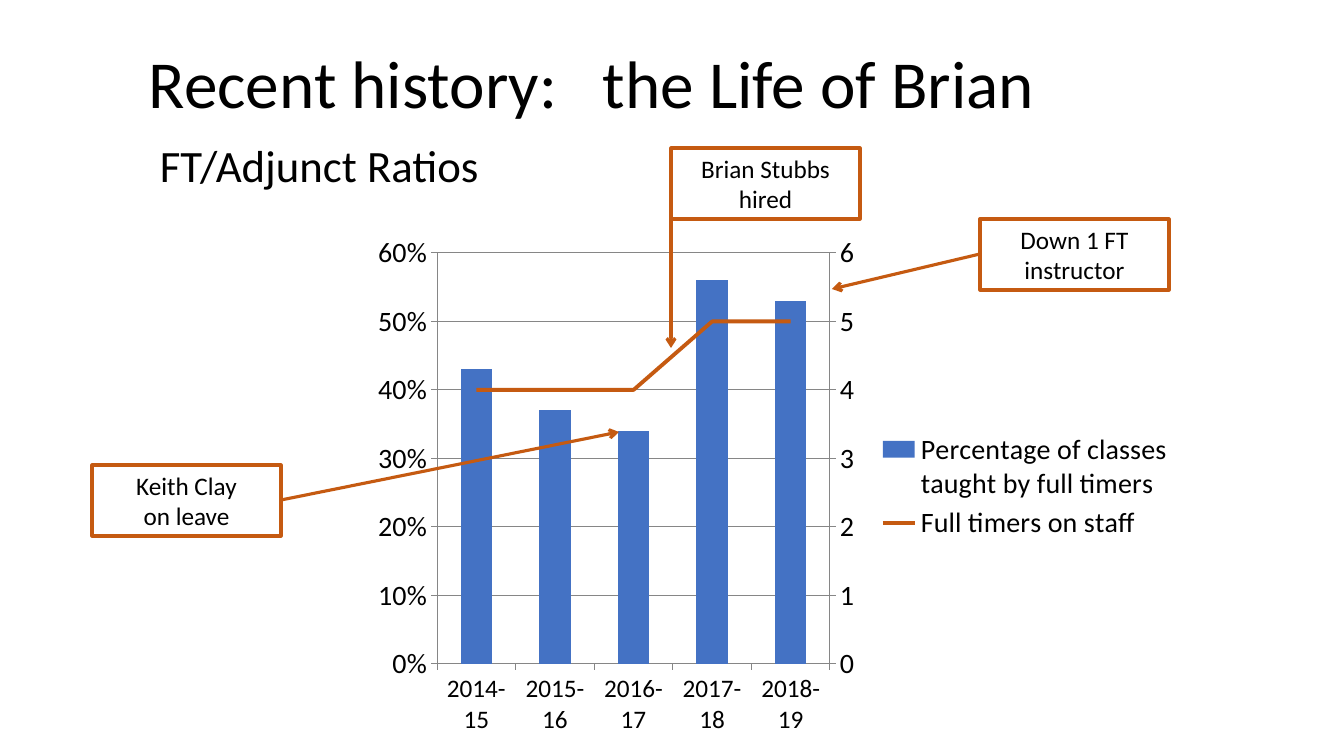
import pptx
import pptx.chart.data
import pptx.dml.color
import pptx.enum.chart
import pptx.enum.shapes
import pptx.enum.text
import pptx.oxml
import pptx.oxml.ns
import pptx.util

rgb = pptx.dml.color.RGBColor.from_string
pt = pptx.util.Pt
qn = pptx.oxml.ns.qn
names = pptx.oxml.ns.nsdecls("c", "a")
theme = {
    "font": "Calibri", "text": "000000", "bar": "4472C4",
    "accent": "C55A11", "grid": "868686",
    "title": 48, "head": 32, "note": 18, "years": 18, "axis": 20,
    "edge": 2.25, "trend": 2.75,
}


def px(count):
    return round(count * 12192000 / 1344)


def place(part, index, box, inner=False):
    """Fix a chart part at a slide box, as shares of the chart frame."""
    for old in part.findall(qn("c:layout")):
        part.remove(old)
    x, y, w, h = box
    left, top, width, height = frame
    shares = {"x": (x - left) / width, "y": (y - top) / height,
              "w": w / width, "h": h / height}
    marks = '<c:layoutTarget val="inner"/>' if inner else ""
    marks += '<c:xMode val="edge"/><c:yMode val="edge"/>'
    marks += "".join(f'<c:{key} val="{share:.4f}"/>' for key, share in shares.items())
    part.insert(index, pptx.oxml.parse_xml(
        f"<c:layout {names}><c:manualLayout>{marks}</c:manualLayout></c:layout>"))


deck = pptx.Presentation()
deck.slide_width, deck.slide_height = px(1344), px(756)
slide = deck.slides.add_slide(deck.slide_layouts[6])

# Headings
headings = [
    ("Recent history:\tthe Life of Brian", (139, 36, 1064, 92), theme["title"]),
    ("FT/Adjunct Ratios", (150, 133, 423, 65), theme["head"]),
]
for words, box, size in headings:
    body = slide.shapes.add_textbox(*map(px, box)).text_frame
    body.word_wrap = True
    body.auto_size = pptx.enum.text.MSO_AUTO_SIZE.SHAPE_TO_FIT_TEXT
    line = body.paragraphs[0]
    line.text = words
    line.font.size = pt(size)
    line.font.name = theme["font"]
    line.font.color.rgb = rgb(theme["text"])
    if "\t" in words:
        line._p.get_or_add_pPr().insert(0, pptx.oxml.parse_xml(
            f'<a:tabLst {names}><a:tab pos="{px(454)}" algn="l"/></a:tabLst>'))

# Chart
data = pptx.chart.data.CategoryChartData()
data.categories = ["2014-15", "2015-16", "2016-17", "2017-18", "2018-19"]
data.add_series("Percentage of classes taught by full timers",
                [0.43, 0.37, 0.34, 0.56, 0.53], "0%")
data.add_series("Full timers on staff", [4, 4, 4, 5, 5], "General")
frame = (362, 225, 820, 520)
chart = slide.shapes.add_chart(
    pptx.enum.chart.XL_CHART_TYPE.COLUMN_CLUSTERED, *map(px, frame), data).chart
chart.has_title = False
chart.font.name = theme["font"]
chart.font.size = pt(theme["axis"])
chart.font.color.rgb = rgb(theme["text"])
chart.has_legend = True
chart.legend.position = pptx.enum.chart.XL_LEGEND_POSITION.RIGHT
chart.legend.include_in_layout = False
chart.legend.font.size = pt(theme["axis"])

years, shares = chart.category_axis, chart.value_axis
shares.minimum_scale, shares.maximum_scale, shares.major_unit = 0, 0.6, 0.1
shares.has_major_gridlines = True
shares.major_gridlines.format.line.color.rgb = rgb(theme["grid"])
shares.tick_labels.number_format = "0%"
shares.tick_labels.number_format_is_linked = False
for axis, size in ((years, theme["years"]), (shares, theme["axis"])):
    axis.format.line.color.rgb = rgb(theme["grid"])
    axis.major_tick_mark = pptx.enum.chart.XL_TICK_MARK.OUTSIDE
    axis.tick_labels.font.size = pt(size)

plot = chart.plots[0]
plot.gap_width = 150
plot.vary_by_categories = False
bars, staff = plot.series
bars.format.fill.solid()
bars.format.fill.fore_color.rgb = rgb(theme["bar"])
staff.format.line.color.rgb = rgb(theme["accent"])
staff.format.line.width = pt(theme["trend"])

# Staff line on a second axis
trend = pptx.oxml.parse_xml(
    f'<c:lineChart {names}><c:grouping val="standard"/><c:varyColors val="0"/>'
    '<c:marker val="1"/><c:axId val="5001"/><c:axId val="5002"/></c:lineChart>')
series = staff._element
for flag in series.findall(qn("c:invertIfNegative")):
    series.remove(flag)
series.find(qn("c:spPr")).addnext(pptx.oxml.parse_xml(
    f'<c:marker {names}><c:symbol val="none"/></c:marker>'))
series.append(pptx.oxml.parse_xml(f'<c:smooth {names} val="0"/>'))
trend.insert(2, series)
plot._element.addnext(trend)
hidden = pptx.oxml.parse_xml(
    f'<c:catAx {names}><c:axId val="5001"/><c:scaling><c:orientation val="minMax"/></c:scaling>'
    '<c:delete val="1"/><c:axPos val="b"/><c:crossAx val="5002"/></c:catAx>')
right = pptx.oxml.parse_xml(
    f'<c:valAx {names}><c:axId val="5002"/><c:scaling><c:orientation val="minMax"/>'
    '<c:max val="6"/><c:min val="0"/></c:scaling><c:delete val="0"/><c:axPos val="r"/>'
    '<c:numFmt formatCode="General" sourceLinked="0"/><c:majorTickMark val="out"/>'
    '<c:minorTickMark val="none"/><c:tickLblPos val="nextTo"/>'
    f'<c:spPr><a:ln><a:solidFill><a:srgbClr val="{theme["grid"]}"/></a:solidFill></a:ln></c:spPr>'
    f'<c:txPr><a:bodyPr/><a:p><a:pPr><a:defRPr sz="{theme["axis"] * 100}"/></a:pPr></a:p></c:txPr>'
    '<c:crossAx val="5001"/><c:crosses val="max"/><c:majorUnit val="1"/></c:valAx>')
shares._element.addnext(hidden)
hidden.addnext(right)
place(plot._element.getparent(), 0, (437, 253, 393, 411), inner=True)
place(chart.legend._element, 1, (875, 428, 300, 116))

# Notes with their arrows
notes = [
    ("Keith Clay\von leave", (92, 465), (281, 500), (619, 432)),
    ("Brian Stubbs hired", (671, 148), (671, 184), (671, 348)),
    ("Down 1 FT\ninstructor", (980, 219), (980, 254), (832, 289)),
]
for words, corner, start, end in notes:
    note = slide.shapes.add_shape(
        pptx.enum.shapes.MSO_SHAPE.RECTANGLE, *map(px, (*corner, 189, 71)))
    note.shadow.inherit = False
    note.fill.background()
    body = note.text_frame
    body.word_wrap = True
    body.auto_size = pptx.enum.text.MSO_AUTO_SIZE.SHAPE_TO_FIT_TEXT
    body.text = words
    for line in body.paragraphs:
        line.alignment = pptx.enum.text.PP_ALIGN.CENTER
        line.font.size = pt(theme["note"])
        line.font.name = theme["font"]
        line.font.color.rgb = rgb(theme["text"])
    arrow = slide.shapes.add_connector(
        pptx.enum.shapes.MSO_CONNECTOR.STRAIGHT, *map(px, (*start, *end)))
    for item in (note, arrow):
        item.line.color.rgb = rgb(theme["accent"])
        item.line.width = pt(theme["edge"])
    props = arrow._element.spPr
    props.find(qn("a:ln")).append(pptx.oxml.parse_xml(f'<a:tailEnd {names} type="arrow"/>'))
    props.append(pptx.oxml.parse_xml(f"<a:effectLst {names}/>"))

deck.save("out.pptx")
